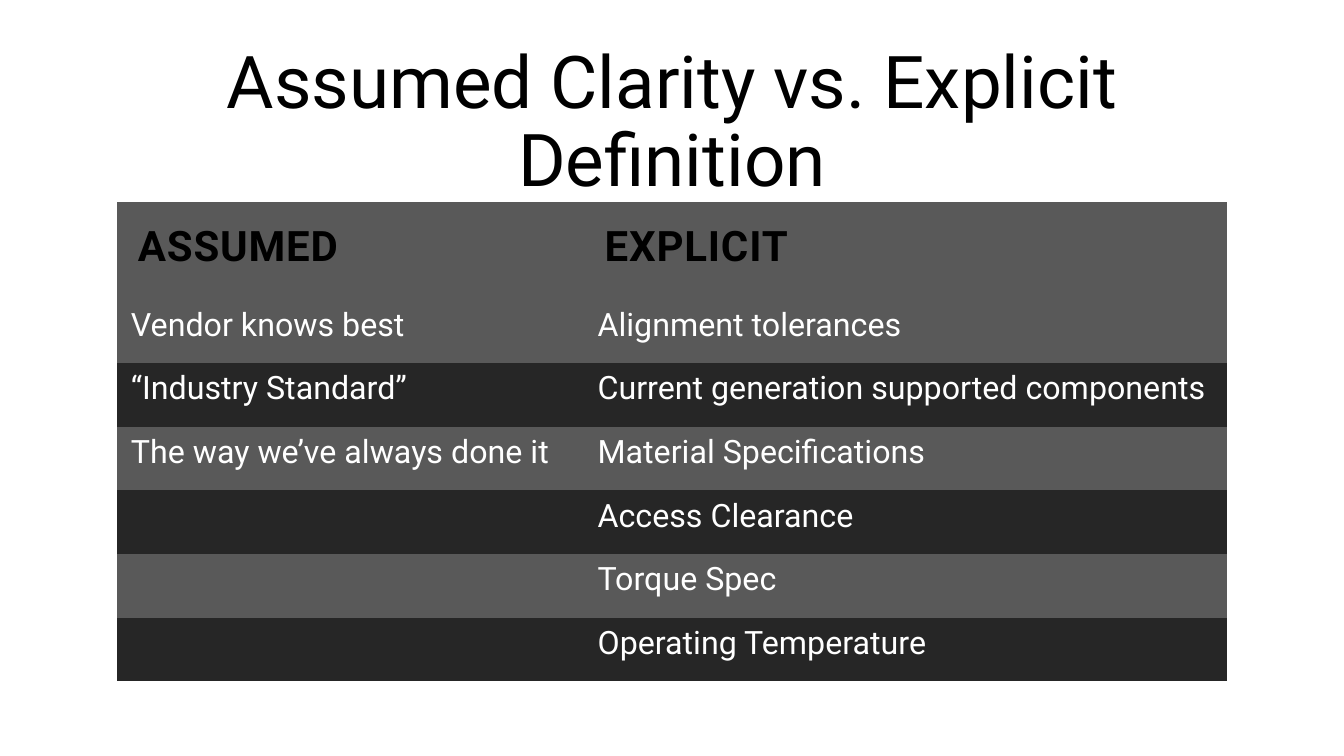
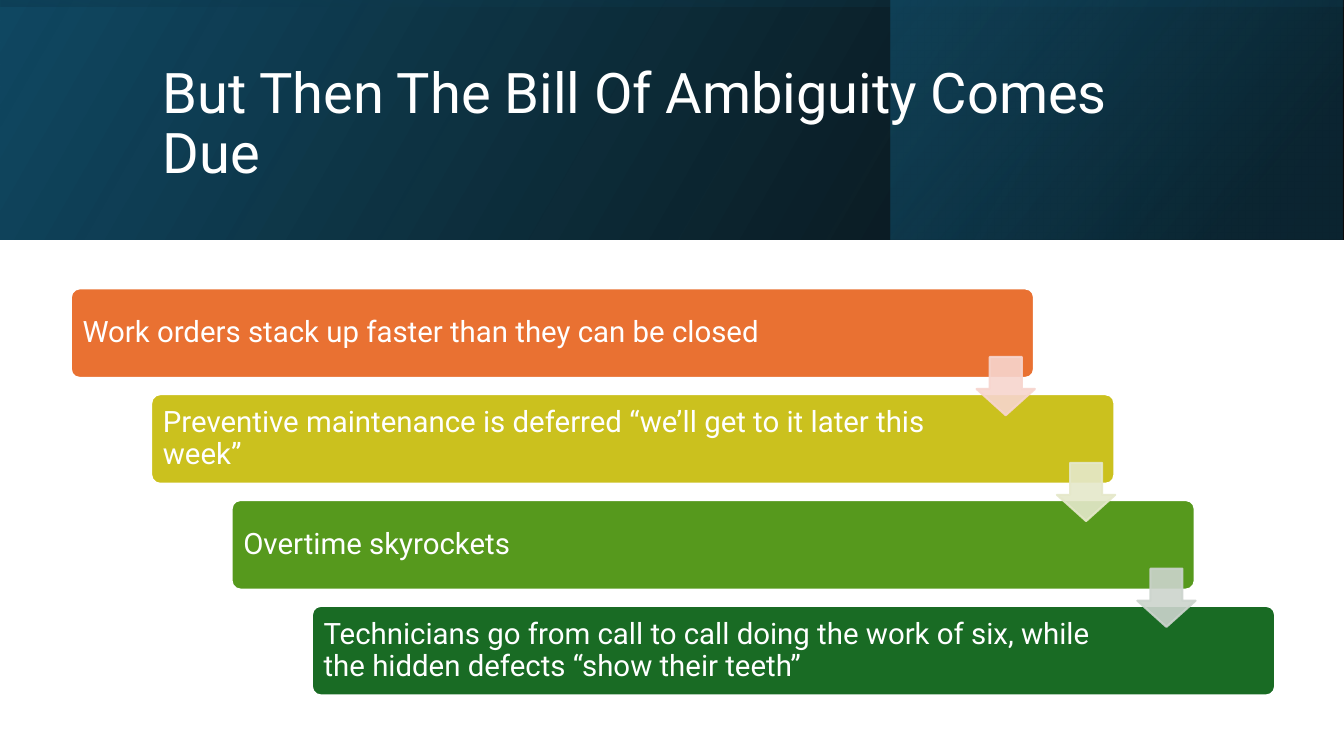
import itertools

import lxml.etree
import pptx
import pptx.dml.color
import pptx.enum.shapes
import pptx.enum.text
import pptx.oxml.ns
import pptx.util

Pt = pptx.util.Pt
qn = pptx.oxml.ns.qn
SHAPES = pptx.enum.shapes.MSO_SHAPE
ALIGN = pptx.enum.text.PP_ALIGN
MIDDLE = pptx.enum.text.MSO_ANCHOR.MIDDLE
PLAIN_TABLE = "{2D5ABB26-0587-4C30-8999-92F81FD0307C}"


def color(value):
    return pptx.dml.color.RGBColor.from_string(value)


def set_opacity(shape, percents):
    color_elements = shape._element.spPr.iter(qn("a:srgbClr"))
    for element, percent in zip(list(color_elements), itertools.cycle(percents)):
        lxml.etree.SubElement(element, qn("a:alpha")).set("val", str(percent * 1000))


class Deck:
    font_name = "Roboto"
    black = "000000"
    white = "FFFFFF"
    navy = "104862"
    light_row = "595959"
    dark_row = "262626"

    def __init__(self):
        self.presentation = pptx.Presentation()
        self.presentation.slide_width = Pt(960)
        self.presentation.slide_height = Pt(540)
        self.slide = None

    def add_slide(self):
        layout = self.presentation.slide_layouts.get_by_name("Title Only")
        self.slide = self.presentation.slides.add_slide(layout)

    def set_text(self, text_frame, text, size, text_color, bold=False, align=ALIGN.LEFT, spacing=None):
        text_frame.text = text
        paragraph = text_frame.paragraphs[0]
        paragraph.alignment = align
        paragraph.line_spacing = spacing
        for run in paragraph.runs:
            run.font.name = self.font_name
            run.font.size = Pt(size)
            run.font.bold = bold
            run.font.color.rgb = color(text_color)

    def title(self, text, box, size, text_color, align=ALIGN.LEFT):
        title = self.slide.shapes.title
        title.left, title.top, title.width, title.height = map(Pt, box)
        self.slide.shapes._spTree.append(title._element)
        text_frame = title.text_frame
        text_frame.word_wrap = True
        text_frame.auto_size = pptx.enum.text.MSO_AUTO_SIZE.NONE
        text_frame.vertical_anchor = MIDDLE
        self.set_text(text_frame, text, size, text_color, align=align, spacing=0.9)

    def shape(self, kind, box, adjustments=()):
        shape = self.slide.shapes.add_shape(kind, *map(Pt, box))
        shape.shadow.inherit = False
        for index, value in enumerate(adjustments):
            shape.adjustments[index] = value
        return shape

    def gradient_band(self, box, angle, stops, rotation=0):
        band = self.shape(SHAPES.RECTANGLE, box)
        band.rotation = rotation
        band._element.spPr.find(qn("a:xfrm")).set("flipH", "1")
        band.line.fill.background()
        band.fill.gradient()
        band.fill.gradient_angle = angle
        for gradient_stop, (position, stop_color, _) in zip(band.fill.gradient_stops, stops):
            gradient_stop.position = position
            gradient_stop.color.rgb = color(stop_color)
        set_opacity(band, [opacity for _, _, opacity in stops])

    def paint(self, shape, fill_color, line_color):
        shape.fill.solid()
        shape.fill.fore_color.rgb = color(fill_color)
        shape.line.color.rgb = color(line_color)
        shape.line.width = Pt(1.5)

    def step(self, text, box, fill_color):
        step = self.shape(SHAPES.ROUNDED_RECTANGLE, box, [0.1])
        self.paint(step, fill_color, self.white)
        text_frame = step.text_frame
        text_frame.word_wrap = True
        text_frame.vertical_anchor = MIDDLE
        text_frame.margin_left = Pt(6.5)
        text_frame.margin_right = Pt(106)
        self.set_text(text_frame, text, 21, self.white, spacing=0.9)

    def arrow(self, box, fill_color):
        arrow = self.shape(SHAPES.DOWN_ARROW, box, [0.55, 0.45])
        self.paint(arrow, fill_color, fill_color)
        set_opacity(arrow, [90])

    def cell(self, cell, text, fill_color, header):
        cell.fill.solid()
        cell.fill.fore_color.rgb = color(fill_color)
        side, top = (15, 15) if header else (10, 5)
        cell.margin_left = cell.margin_right = cell.margin_bottom = Pt(side)
        cell.margin_top = Pt(top)
        self.set_text(cell.text_frame, text, 30 if header else 23,
                      self.black if header else self.white, bold=header)
        if header:
            for run in cell.text_frame.paragraphs[0].runs:
                run.font._element.set("spc", "60")

    def table(self, rows, left, top, widths, header_height, row_height):
        heights = [header_height] + [row_height] * (len(rows) - 1)
        frame = self.slide.shapes.add_table(
            len(rows), len(widths), Pt(left), Pt(top), Pt(sum(widths)), Pt(sum(heights)))
        table = frame.table
        table.first_row = table.horz_banding = False
        table._tbl.tblPr.find(qn("a:tableStyleId")).text = PLAIN_TABLE
        for column, width in zip(table.columns, widths):
            column.width = Pt(width)
        for index, (texts, height) in enumerate(zip(rows, heights)):
            table.rows[index].height = Pt(height)
            dark = index > 0 and index % 2 == 0
            fill_color = self.dark_row if dark else self.light_row
            for column_index, text in enumerate(texts):
                self.cell(table.cell(index, column_index), text, fill_color, index == 0)


def build_comparison(deck):
    deck.add_slide()
    deck.title("Assumed Clarity vs. Explicit Definition", (66, 44, 828, 89), 52,
               deck.black, ALIGN.CENTER)
    rows = [
        ("ASSUMED", "EXPLICIT"),
        ("Vendor knows best", "Alignment tolerances"),
        ("“Industry Standard”", "Current generation supported components"),
        ("The way we’ve always done it", "Material Specifications"),
        ("", "Access Clearance"),
        ("", "Torque Spec"),
        ("", "Operating Temperature"),
    ]
    deck.table(rows, 83.5, 144.2, (333.4, 459.4), 69.6, 45.5)


def build_consequences(deck):
    deck.add_slide()
    band_height = 171
    deck.gradient_band((0, 0, 960, band_height), 30,
                       [(0, deck.black, 96), (1, deck.navy, 100)])
    deck.gradient_band((636.5, 0, 322.5, band_height), 40,
                       [(0.19, "0B3041", 68), (1, "156082", 48)])
    offset = (960 - band_height) / 2
    deck.gradient_band((offset, -offset, band_height, 960), 10,
                       [(0.23, deck.navy, 16), (0.99, deck.black, 45)], rotation=270)
    deck.title("But Then The Bill Of Ambiguity Comes Due", (109, 27.5, 765, 124), 40, deck.white)

    steps = [
        ("Work orders stack up faster than they can be closed", "E97132"),
        ("Preventive maintenance is deferred “we’ll get to it later this week”", "CBC11E"),
        ("Overtime skyrockets", "56991D"),
        ("Technicians go from call to call doing the work of six, while "
         "the hidden defects “show their teeth”", "196B24"),
    ]
    step_right, step_down = 57.4, 75.6
    for index, (text, fill_color) in enumerate(steps):
        deck.step(text, (50.6 + index * step_right, 206 + index * step_down, 688, 64), fill_color)
    for index, fill_color in enumerate(("F7D5CE", "E5E8CA", "CCD4CD")):
        deck.arrow((697.6 + index * step_right, 255 + index * step_down, 41.6, 41.6), fill_color)


def main():
    deck = Deck()
    build_comparison(deck)
    build_consequences(deck)
    deck.presentation.save("out.pptx")


if __name__ == "__main__":
    main()
